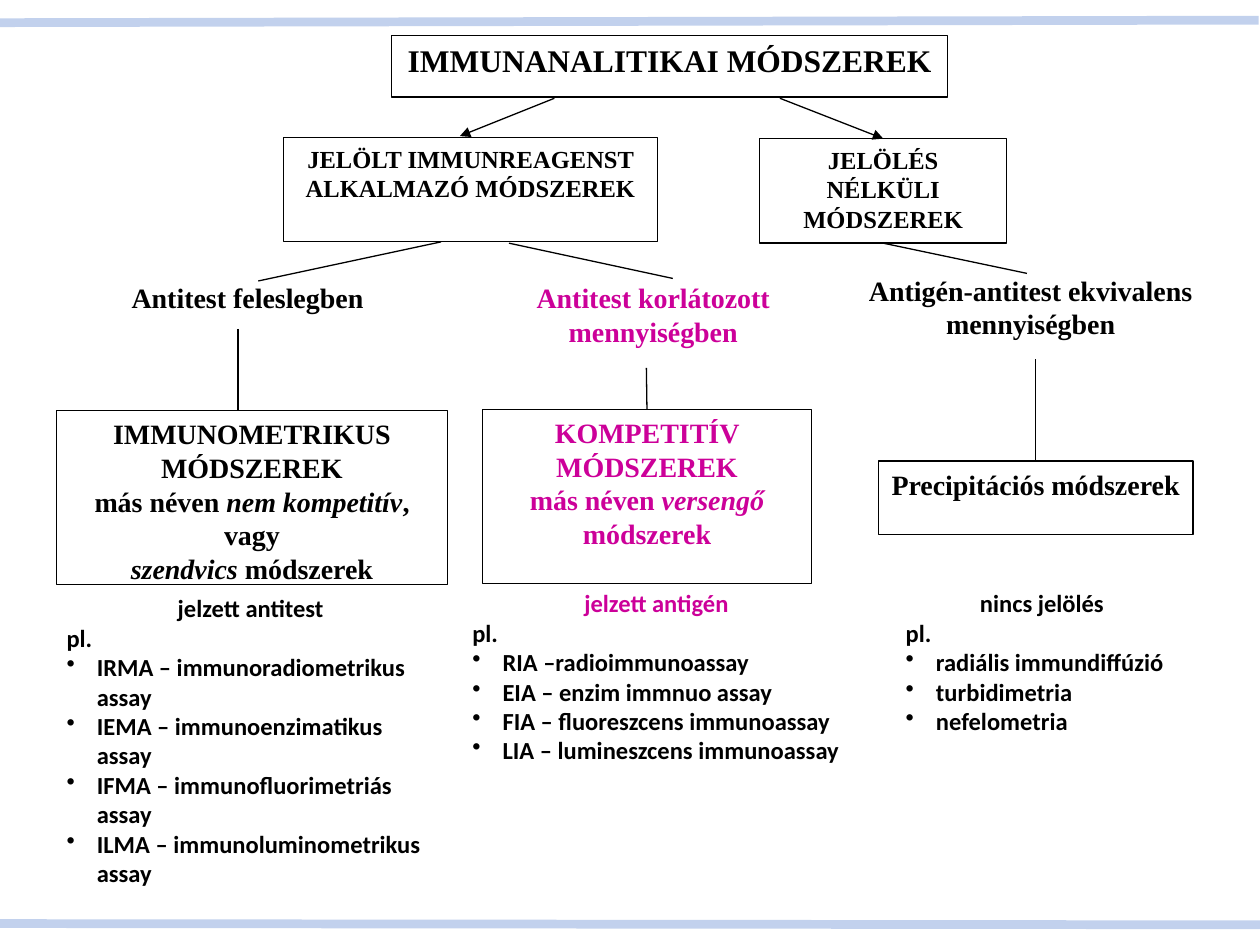
from lxml.etree import SubElement
from pptx import Presentation
from pptx.dml.color import RGBColor
from pptx.enum.shapes import MSO_CONNECTOR as Connector, MSO_SHAPE as Shape
from pptx.enum.text import MSO_ANCHOR as Anchor, PP_ALIGN as Align
from pptx.oxml.ns import qn
from pptx.util import Inches, Pt

BLACK = RGBColor(0x00, 0x00, 0x00)
WHITE = RGBColor(0xFF, 0xFF, 0xFF)
MAGENTA = RGBColor(0xCC, 0x00, 0x99)
PALE_BLUE = RGBColor(0xC2, 0xD1, 0xED)
SERIF = "Times New Roman"
SANS = "Calibri"
TOP, BOTTOM = 0, 2


def add_span(para, text, **formats):
    span = para.add_run()
    span.text = text
    color = formats.pop("color")
    for name, value in {"bold": True, **formats}.items():
        setattr(span.font, name, value)
    span.font.color.rgb = color


def add_bullet(para):
    properties = para._p.get_or_add_pPr()
    properties.set("marL", str(Inches(0.24)))
    properties.set("indent", str(-Inches(0.24)))
    SubElement(properties, qn("a:buChar")).set("char", "•")


def add_box(page, place, outlined=False):
    box = page.shapes.add_shape(Shape.RECTANGLE, *map(Inches, place))
    box.shadow.inherit = False
    box.fill.solid()
    box.fill.fore_color.rgb = WHITE
    if outlined:
        box.line.color.rgb = BLACK
        box.line.width = Pt(0.75)
    else:
        box.line.fill.background()
    box.text_frame.word_wrap = True
    box.text_frame.vertical_anchor = Anchor.TOP
    return box


def next_para(frame, index):
    return frame.paragraphs[0] if index == 0 else frame.add_paragraph()


def add_label(page, place, paragraphs, size=16, color=BLACK, outlined=True):
    box = add_box(page, place, outlined)
    for index, spans in enumerate(paragraphs):
        para = next_para(box.text_frame, index)
        para.alignment = Align.CENTER
        for text, italic in spans:
            add_span(para, text, name=SERIF, size=Pt(size), italic=italic, color=color)
    return box


def add_examples(page, place, heading, examples, heading_color=BLACK):
    frame = add_box(page, place).text_frame
    for index, text in enumerate([heading, "pl.", *examples]):
        para = next_para(frame, index)
        para.alignment = Align.CENTER if index == 0 else Align.LEFT
        if index > 1:
            add_bullet(para)
        color = heading_color if index == 0 else BLACK
        add_span(para, text, name=SANS, size=Pt(14), color=color)


def add_line(page, start, end, color=BLACK, width=0.75, arrow=False):
    line = page.shapes.add_connector(Connector.STRAIGHT, *map(Inches, (*start, *end)))
    line.line.color.rgb = color
    line.line.width = Pt(width)
    if arrow:
        SubElement(line.line._get_or_add_ln(), qn("a:tailEnd")).set("type", "triangle")
    SubElement(line._element.spPr, qn("a:effectLst"))
    return line


def plain(text):
    return [[(text, False)]]


def main():
    deck = Presentation()
    deck.slide_width, deck.slide_height = Inches(10), Inches(7.5)
    page = deck.slides.add_slide(deck.slide_layouts[6])

    add_line(page, (-0.02, 0.18), (9.99, 0.16), PALE_BLUE, 5)
    add_line(page, (0, 7.33), (10.04, 7.34), PALE_BLUE, 5)

    add_examples(page, (3.65, 4.62, 3.12, 2.2), "jelzett antigén", [
        "RIA –radioimmunoassay",
        "EIA – enzim immnuo assay",
        "FIA – fluoreszcens immunoassay",
        "LIA – lumineszcens immunoassay",
    ], MAGENTA)
    add_examples(page, (0.43, 4.66, 3.12, 2.16), "jelzett antitest", [
        "IRMA – immunoradiometrikus assay",
        "IEMA – immunoenzimatikus assay",
        "IFMA – immunofluorimetriás assay",
        "ILMA – immunoluminometrikus assay",
    ])

    add_label(page, (3.11, 0.28, 4.41, 0.49), plain("IMMUNANALITIKAI MÓDSZEREK"), 18)
    add_label(page, (0.45, 3.26, 3.1, 1.38), [
        [("IMMUNOMETRIKUS MÓDSZEREK", False)],
        [("más néven ", False), ("nem kompetitív", True), (", vagy", False)],
        [("szendvics", True), (" módszerek", False)],
    ])
    add_label(page, (6.79, 2.12, 2.78, 0.83),
              plain("Antigén-antitest ekvivalens mennyiségben"), outlined=False)
    competitive = add_label(page, (3.83, 3.25, 2.61, 1.38), [
        [("KOMPETITÍV MÓDSZEREK", False)],
        [("más néven ", False), ("versengő", True), (" módszerek", False)],
    ], color=MAGENTA)
    add_label(page, (2.25, 1.09, 2.97, 0.83),
              plain("JELÖLT IMMUNREAGENST ALKALMAZÓ MÓDSZEREK"), 14)
    unlabelled = add_label(page, (6.03, 1.1, 1.96, 0.83),
                           plain("JELÖLÉS NÉLKÜLI MÓDSZEREK"), 14)
    precipitation = add_label(page, (6.97, 3.66, 2.5, 0.58),
                              plain("Precipitációs módszerek"))
    add_examples(page, (7.09, 4.62, 2.36, 1.55), "nincs jelölés", [
        "radiális immundiffúzió",
        "turbidimetria",
        "nefelometria",
    ])
    add_label(page, (0.48, 2.18, 2.97, 0.83), plain("Antitest feleslegben"),
              outlined=False)
    add_label(page, (3.7, 2.18, 2.97, 0.83), plain("Antitest korlátozott mennyiségben"),
              color=MAGENTA, outlined=False)

    add_line(page, (4.4, 0.78), (3.65, 1.08), arrow=True)
    to_unlabelled = add_line(page, (6.19, 0.78), (7.01, 1.1), arrow=True)
    to_unlabelled.end_connect(unlabelled, TOP)
    add_line(page, (3.5, 1.92), (2.05, 2.23))
    add_line(page, (4.04, 1.93), (5.34, 2.21))
    from_unlabelled = add_line(page, (7.01, 1.93), (8.15, 2.17))
    from_unlabelled.begin_connect(unlabelled, BOTTOM)
    add_line(page, (1.89, 2.61), (1.89, 3.25))
    to_competitive = add_line(page, (5.13, 2.92), (5.13, 3.25))
    to_competitive.end_connect(competitive, TOP)
    to_precipitation = add_line(page, (8.22, 2.85), (8.22, 3.66))
    to_precipitation.end_connect(precipitation, TOP)

    deck.save("out.pptx")


if __name__ == "__main__":
    main()
